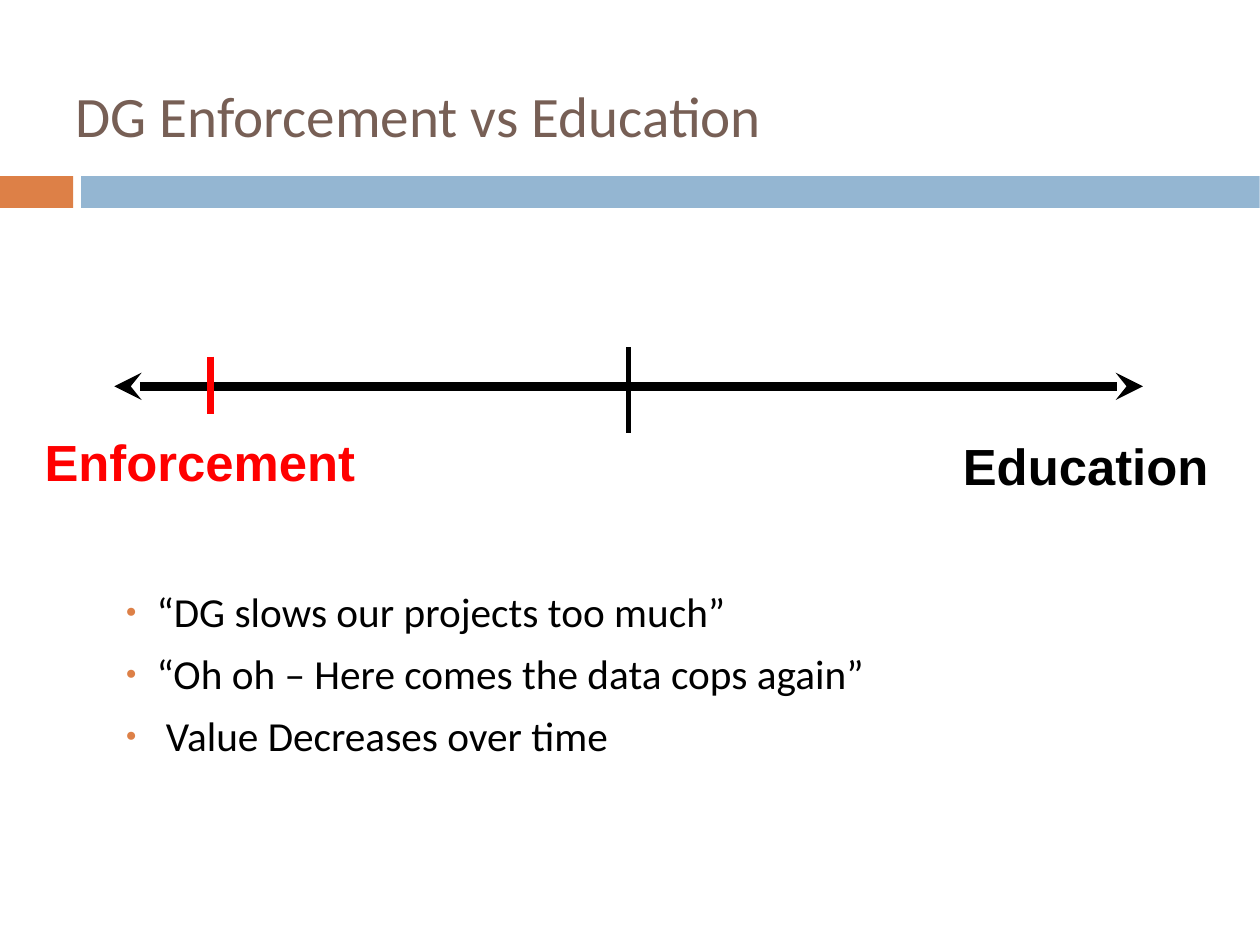
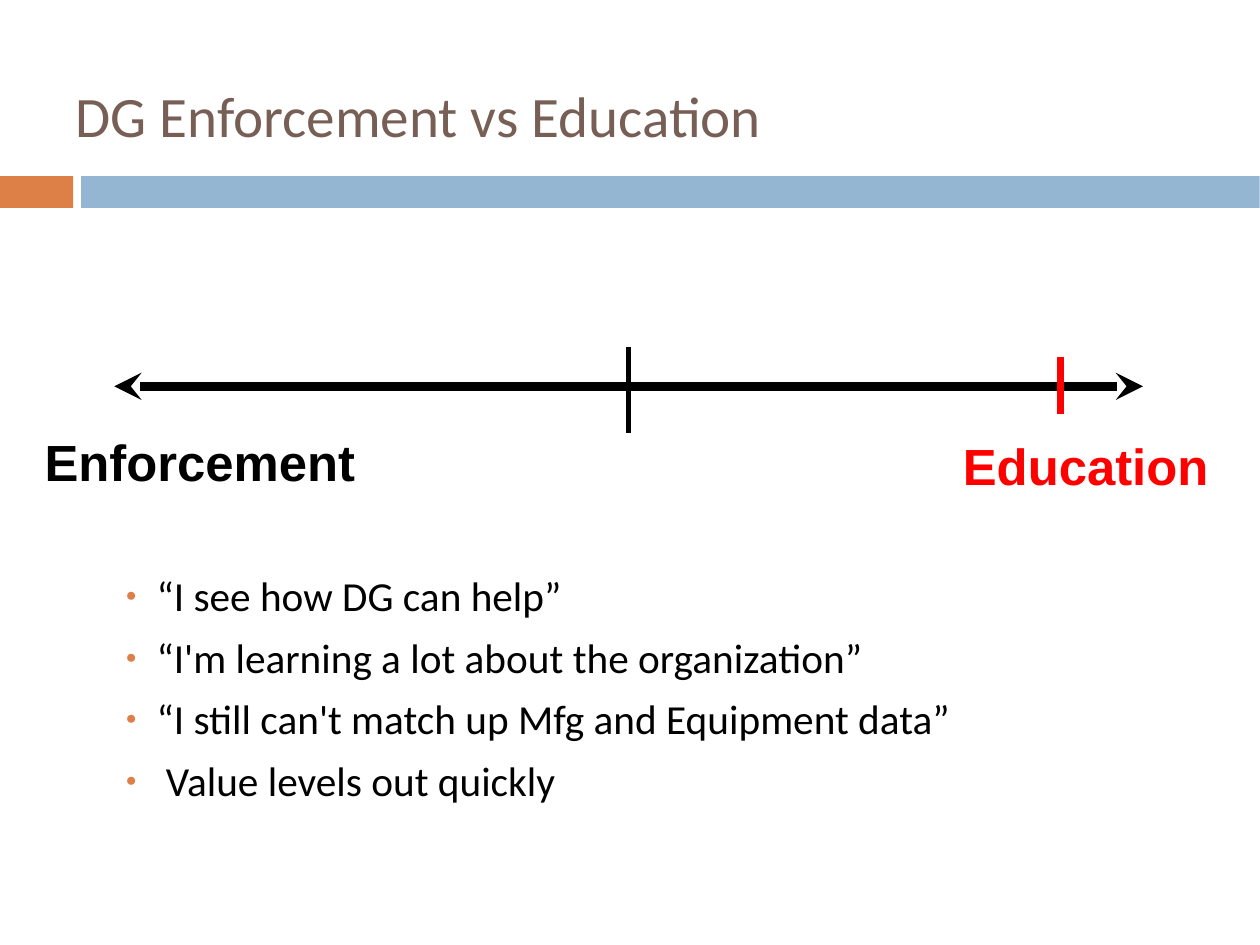
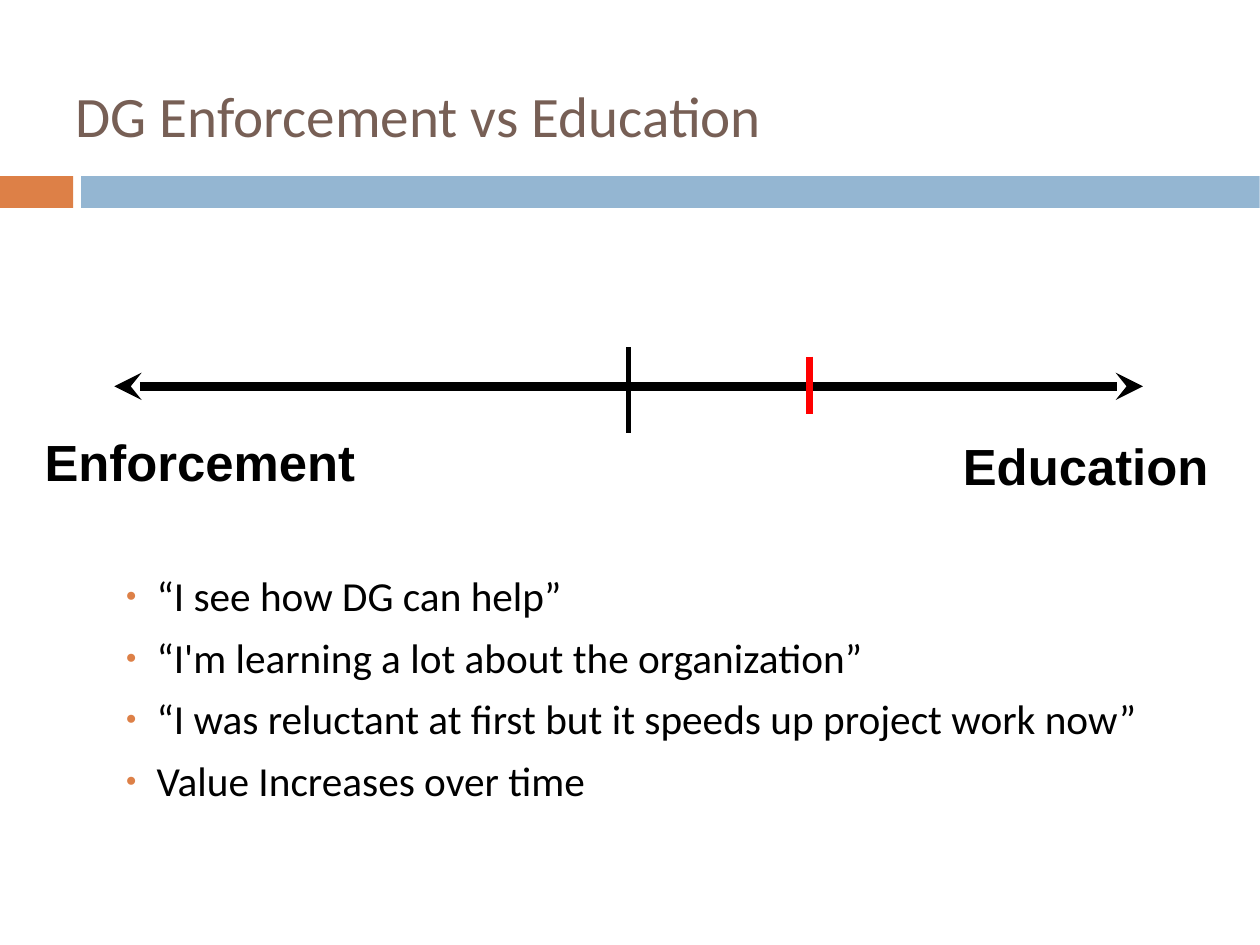
from dataclasses import dataclass

from lxml import etree
from pptx import Presentation
from pptx import util as u
from pptx.dml.color import RGBColor
from pptx.enum import shapes, text
from pptx.oxml import ns, parse_xml


@dataclass(frozen=True)
class Theme:
    orange: str = "DD8047"
    blue: str = "94B6D2"
    brown: str = "775F55"
    black: str = "000000"
    red: str = "FF0000"
    body_font: str = "Calibri"
    label_font: str = "Arial"
    title_size: int = 36
    list_size: int = 26
    label_size: int = 32
    axis_width: float = 5.75
    marker_width: float = 4.31
    center_width: float = 2.89


theme = Theme()


def add_line(slide, start, end, color, width, arrows=False):
    ends = [u.Inches(v) for v in (*start, *end)]
    line = slide.shapes.add_connector(shapes.MSO_CONNECTOR.STRAIGHT, *ends)
    line.line.color.rgb = RGBColor.from_string(color)
    line.line.width = u.Pt(width)
    if arrows:
        for tag in ("a:headEnd", "a:tailEnd"):
            etree.SubElement(line.line._ln, ns.qn(tag), type="stealth")
    etree.SubElement(line.element.spPr, ns.qn("a:effectLst"))


def set_level(placeholder, size, color, attrs, children):
    level = parse_xml(
        f'<a:lvl1pPr {ns.nsdecls("a")} algn="l" {attrs}>{children}'
        f'<a:defRPr sz="{size * 100}"><a:solidFill><a:srgbClr val="{color}"/></a:solidFill>'
        f'<a:latin typeface="{theme.body_font}"/></a:defRPr></a:lvl1pPr>'
    )
    style = placeholder.text_frame._txBody.find(ns.qn("a:lstStyle"))
    style.append(level)


prs = Presentation()
prs.slide_width, prs.slide_height = u.Cm(28), u.Cm(21)
layout = prs.slide_layouts[1]
title, body = layout.placeholders[0], layout.placeholders[1]

for sp, box, insets in (
    (title, (0.55, 0.38, 9.92, 1.28), (0.11, 0.03, 0.11, 0.06)),
    (body, (1.1, 4.5, 9.92, 3), (0, 0.03, 0, 0)),
):
    sp.left, sp.top, sp.width, sp.height = [u.Inches(v) for v in box]
    tf = sp.text_frame
    tf.margin_left, tf.margin_top, tf.margin_right, tf.margin_bottom = [u.Inches(v) for v in insets]
    tf.vertical_anchor = text.MSO_ANCHOR.MIDDLE
    tf.auto_size = text.MSO_AUTO_SIZE.NONE
    tf.word_wrap = True

indent = u.Inches(0.27)
set_level(title, theme.title_size, theme.brown, "", "")
set_level(
    body, theme.list_size, theme.black, f'marL="{indent}" indent="-{indent}"',
    '<a:spcBef><a:spcPts val="770"/></a:spcBef>'
    f'<a:buClr><a:srgbClr val="{theme.orange}"/></a:buClr><a:buSzPct val="45000"/>'
    f'<a:buFont typeface="{theme.label_font}"/><a:buChar char="●"/>',
)

labels = (("Enforcement", (0.25, 3.67, 3, 0.75)), ("Education", (8.25, 3.71, 2.5, 0.75)))
pages = (
    ("Enforcement", 1.84, 2.75, (
        "“DG slows our projects too much”",
        "“Oh oh – Here comes the data cops again”",
        " Value Decreases over time",
    )),
    ("Education", 9.28, 3, (
        "“I see how DG can help”",
        "“I'm learning a lot about the organization”",
        "“I still can't match up Mfg and Equipment data”",
        " Value levels out quickly",
    )),
    (None, 7.08, 3, (
        "“I see how DG can help”",
        "“I'm learning a lot about the organization”",
        "“I was reluctant at first but it speeds up project work now”",
        "Value Increases over time",
    )),
)

for active, marker_x, list_height, items in pages:
    slide = prs.slides.add_slide(layout)
    slide.shapes.title.text_frame.paragraphs[0].add_run().text = "DG Enforcement vs Education"

    sp = slide.placeholders[1]
    sp.left, sp.top, sp.width, sp.height = [u.Inches(v) for v in (1.1, 4.5, 9.92, list_height)]
    tf = sp.text_frame
    for i, item in enumerate(items):
        p = tf.add_paragraph() if i else tf.paragraphs[0]
        p.add_run().text = item

    add_line(slide, (1, 3.38), (10, 3.38), theme.black, theme.axis_width, arrows=True)

    for label, box in labels:
        sp = slide.shapes.add_shape(shapes.MSO_SHAPE.ROUNDED_RECTANGLE, *[u.Inches(v) for v in box])
        sp.adjustments[0] = 0
        sp.shadow.inherit = False
        sp.fill.background()
        sp.line.fill.background()
        tf = sp.text_frame
        tf.word_wrap = True
        tf.vertical_anchor = text.MSO_ANCHOR.MIDDLE
        tf.margin_left = tf.margin_right = u.Inches(0.1)
        tf.margin_top, tf.margin_bottom = u.Inches(0.08), u.Inches(0.05)
        p = tf.paragraphs[0]
        p.alignment = text.PP_ALIGN.CENTER
        p.line_spacing = 0.93
        r = p.add_run()
        r.text = label
        r.font.name, r.font.size, r.font.bold = theme.label_font, u.Pt(theme.label_size), True
        r.font.color.rgb = RGBColor.from_string(theme.red if label == active else theme.black)

    add_line(slide, (marker_x, 3.12), (marker_x, 3.62), theme.red, theme.marker_width)
    add_line(slide, (5.5, 3.04), (5.5, 3.79), theme.black, theme.center_width)

bands = []
for left, width, color in ((0, 0.64, theme.orange), (0.71, 10.31, theme.blue)):
    band = prs.slides[0].shapes.add_shape(
        shapes.MSO_SHAPE.RECTANGLE, *[u.Inches(v) for v in (left, 1.54, width, 0.28)]
    )
    band.shadow.inherit = False
    band.fill.solid()
    band.fill.fore_color.rgb = RGBColor.from_string(color)
    band.line.fill.background()
    bands.append(band.element)

for i, band in enumerate(bands):
    layout.shapes.element.insert(2 + i, band)

prs.save("out.pptx")
